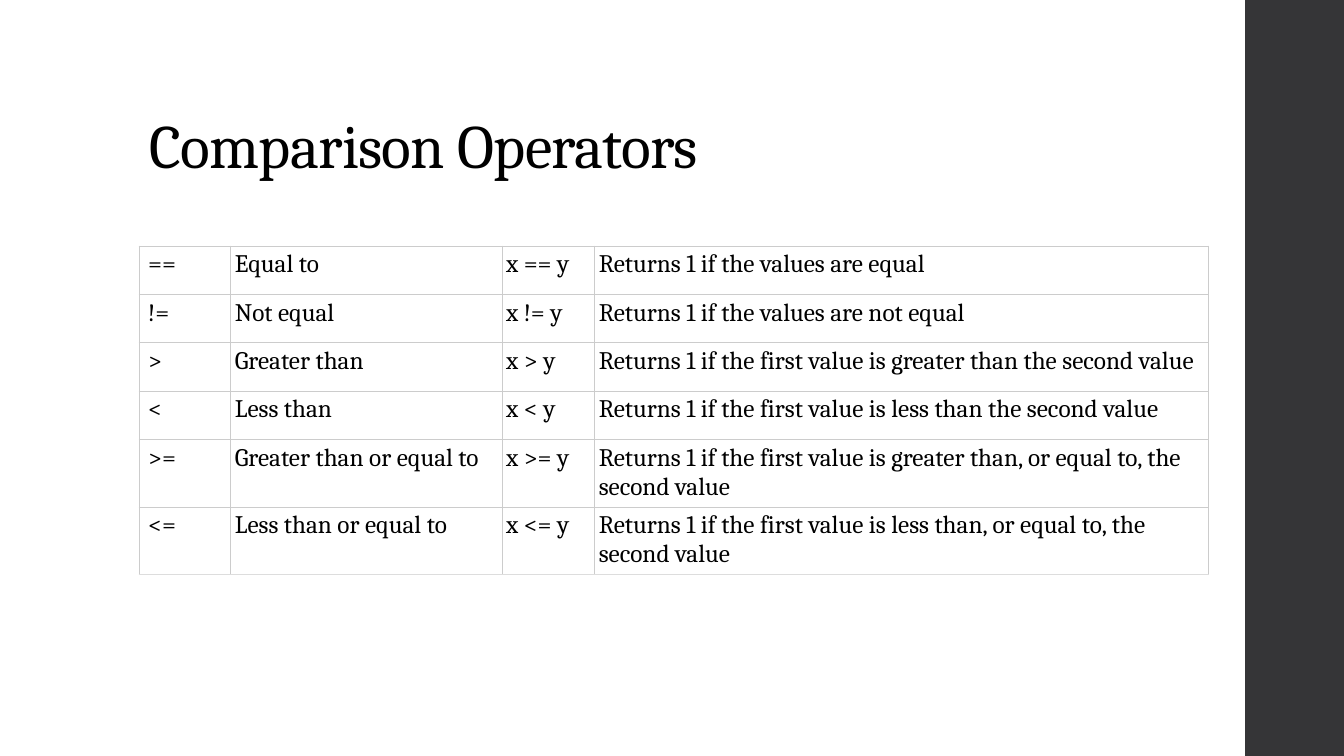
from dataclasses import dataclass

from lxml.etree import SubElement
from pptx import Presentation
from pptx.dml.color import RGBColor
from pptx.enum.shapes import MSO_SHAPE as Shape
from pptx.enum.text import MSO_ANCHOR as Anchor, MSO_AUTO_SIZE as AutoSize, PP_ALIGN as Align
from pptx.oxml.ns import qn
from pptx.slide import Slide
from pptx.table import _Cell as Cell
from pptx.text.text import TextFrame
from pptx.util import Inches, Pt


@dataclass(frozen=True)
class Theme:
    font: str = "Cambria"
    text: str = "000000"
    paper: str = "FFFFFF"
    band: str = "353537"
    grid: str = "CCCCCC"
    grid_end: str = "DDDDDD"
    title_size: float = 44
    cell_size: float = 18
    grid_width: float = 0.75


@dataclass(frozen=True)
class Operator:
    symbol: str
    name: str
    example: str
    result: str
    height: float = 0.48

    def texts(self) -> tuple[str, ...]:
        return self.symbol, self.name, self.example, self.result


THEME = Theme()
LEFT, WIDTH = 1.38, 10.6
TABLE_TOP = 2.44
COLUMN_WIDTHS = (0.91, 2.69, 0.92, 6.09)
CELL_INSET, FIRST_INSET = 0.04, 0.09
TALL_ROW = 0.67

OPERATORS = (
    Operator("==", "Equal to", "x == y", "Returns 1 if the values are equal"),
    Operator("!=", "Not equal", "x != y", "Returns 1 if the values are not equal"),
    Operator(">", "Greater than", "x > y",
             "Returns 1 if the first value is greater than the second value"),
    Operator("<", "Less than", "x < y",
             "Returns 1 if the first value is less than the second value"),
    Operator(">=", "Greater than or equal to", "x >= y",
             "Returns 1 if the first value is greater than, or equal to, the second value", TALL_ROW),
    Operator("<=", "Less than or equal to", "x <= y",
             "Returns 1 if the first value is less than, or equal to, the second value", TALL_ROW),
)


def write(tf: TextFrame, text: str, *, size: float, line_spacing: float = 1.0,
          tracking: float = 0) -> None:
    p = tf.paragraphs[0]
    p.alignment = Align.LEFT
    p.line_spacing = line_spacing
    r = p.add_run()
    r.text = text
    r.font.name = THEME.font
    r.font.size = Pt(size)
    r.font.color.rgb = RGBColor.from_string(THEME.text)
    if tracking:
        r._r.get_or_add_rPr().set("spc", str(round(tracking * 100)))


def add_band(s: Slide) -> None:
    sp = s.shapes.add_shape(Shape.RECTANGLE, Inches(12.35), 0, Inches(0.98), Inches(7.5))
    sp.shadow.inherit = False
    sp.fill.solid()
    sp.fill.fore_color.rgb = RGBColor.from_string(THEME.band)
    sp.line.fill.background()


def add_title(s: Slide, text: str) -> None:
    sp = s.shapes.title
    sp.left, sp.top, sp.width, sp.height = map(Inches, (LEFT, 0.4, WIDTH, 1.45))
    tf = sp.text_frame
    tf.word_wrap = True
    tf.auto_size = AutoSize.NONE
    tf.vertical_anchor = Anchor.BOTTOM
    write(tf, text, size=THEME.title_size, line_spacing=0.9, tracking=-0.5)


def set_borders(cell: Cell, bottom: str) -> None:
    tc_pr = cell._tc.get_or_add_tcPr()
    sides = {"lnL": THEME.grid, "lnR": THEME.grid, "lnT": THEME.grid, "lnB": bottom}
    for side, color in sides.items():
        ln = SubElement(tc_pr, qn(f"a:{side}"), w=str(Pt(THEME.grid_width)))
        fill = SubElement(ln, qn("a:solidFill"))
        SubElement(fill, qn("a:srgbClr"), val=color)


def add_operator_table(s: Slide, operators: tuple[Operator, ...]) -> None:
    height = sum(op.height for op in operators)
    table = s.shapes.add_table(len(operators), len(COLUMN_WIDTHS), Inches(LEFT),
                               Inches(TABLE_TOP), Inches(WIDTH), Inches(height)).table
    table.first_row = table.horz_banding = False
    for column, width in zip(table.columns, COLUMN_WIDTHS):
        column.width = Inches(width)
    for row, op in zip(table.rows, operators):
        row.height = Inches(op.height)
        bottom = THEME.grid_end if op is operators[-1] else THEME.grid
        for i, (cell, text) in enumerate(zip(row.cells, op.texts())):
            cell.margin_left = Inches(CELL_INSET if i else FIRST_INSET)
            cell.margin_right = cell.margin_top = cell.margin_bottom = Inches(CELL_INSET)
            cell.vertical_anchor = Anchor.TOP
            set_borders(cell, bottom)
            cell.fill.solid()
            cell.fill.fore_color.rgb = RGBColor.from_string(THEME.paper)
            write(cell.text_frame, text, size=THEME.cell_size)


def main() -> None:
    prs = Presentation()
    prs.slide_width, prs.slide_height = Inches(13.33), Inches(7.5)
    s = prs.slides.add_slide(prs.slide_layouts.get_by_name("Title Only"))
    s.background.fill.solid()
    s.background.fill.fore_color.rgb = RGBColor.from_string(THEME.paper)
    add_band(s)
    add_title(s, "Comparison Operators")
    add_operator_table(s, OPERATORS)
    prs.save("out.pptx")


if __name__ == "__main__":
    main()
